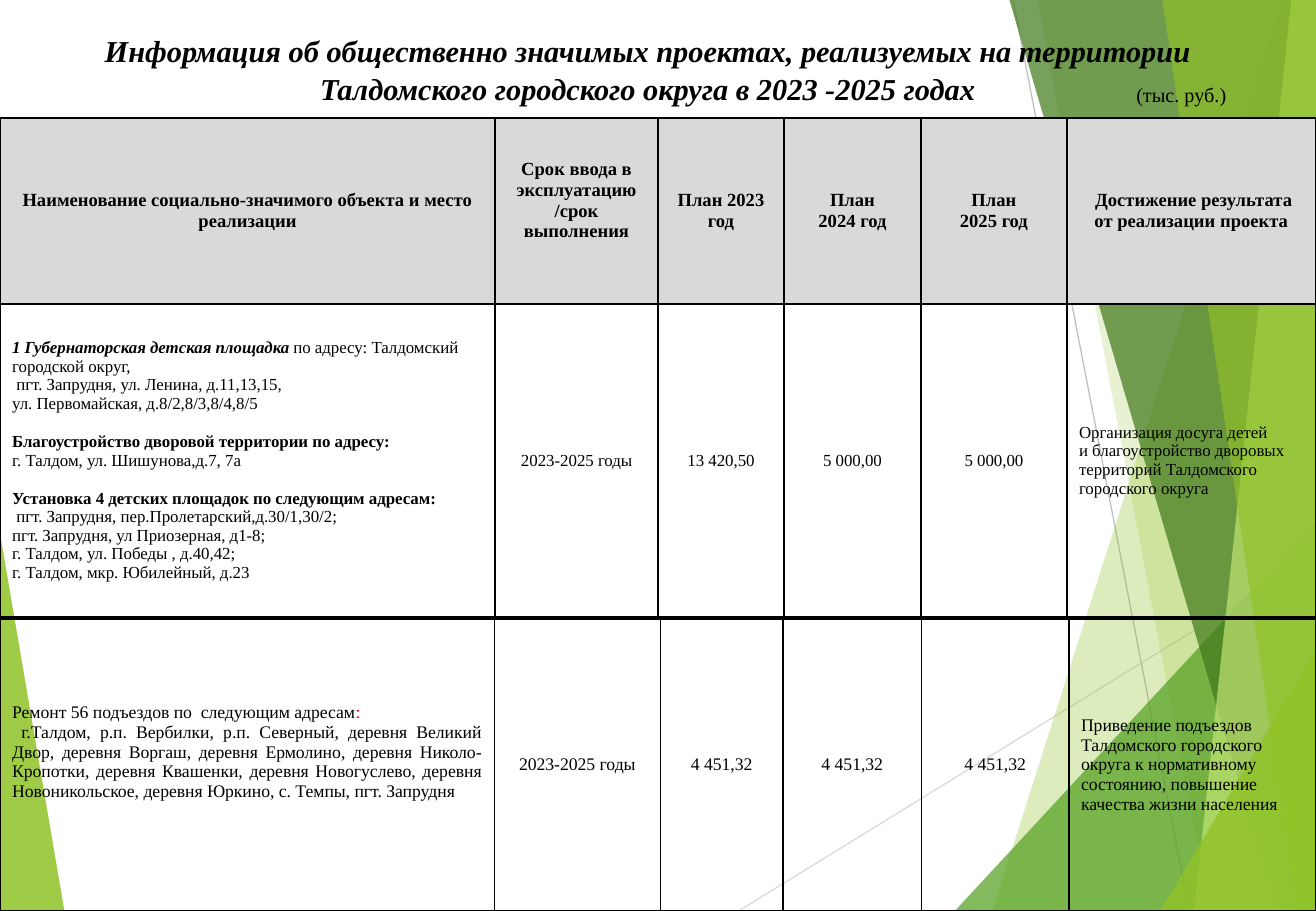
from dataclasses import dataclass

from lxml import etree
from pptx import Presentation
from pptx.dml.color import RGBColor
from pptx.enum.shapes import MSO_CONNECTOR
from pptx.enum.text import MSO_ANCHOR, MSO_AUTO_SIZE, PP_ALIGN
from pptx.oxml.ns import qn
from pptx.util import Pt

LEFT, CENTER, JUSTIFY = PP_ALIGN.LEFT, PP_ALIGN.CENTER, PP_ALIGN.JUSTIFY
TOP, MIDDLE = MSO_ANCHOR.TOP, MSO_ANCHOR.MIDDLE
NO_AUTOFIT, STRAIGHT = MSO_AUTO_SIZE.NONE, MSO_CONNECTOR.STRAIGHT


@dataclass(frozen=True)
class Theme:
    """Colours, font and type sizes of the slide."""
    font: str = "Times New Roman"
    text: str = "000000"
    accent: str = "FF0000"
    header_fill: str = "D9D9D9"
    lime: str = "90C226"
    green: str = "54A021"
    forest: str = "3F7819"
    pale: str = "C0E474"
    title_size: float = 18
    unit_size: float = 12
    header_size: float = 11
    playground_size: float = 10
    repair_size: float = 10.5


THEME = Theme()
WIDTH, HEIGHT = 780, 540

TITLE = ["Информация об общественно значимых проектах, реализуемых на территории",
         "Талдомского городского округа в 2023 -2025 годах"]
UNIT = ["(тыс. руб.)"]
HEADER = [
    ["Наименование социально-значимого объекта и место реализации"],
    ["Срок ввода в эксплуатацию /срок выполнения"],
    ["План 2023 год"],
    ["План", "2024 год"],
    ["План", "2025 год"],
    [" Достижение результата от реализации проекта"],
]
PLAYGROUNDS = [
    [[("1 Губернаторская детская площадка ", "lead"),
      ("по адресу: Талдомский городской округ,", "plain")],
     " пгт. Запрудня, ул. Ленина, д.11,13,15,",
     "ул. Первомайская, д.8/2,8/3,8/4,8/5",
     [("Благоустройство дворовой территории по адресу:", "heading")],
     "г. Талдом, ул. Шишунова,д.7, 7а",
     [("Установка 4 детских площадок по следующим адресам:", "heading")],
     " пгт. Запрудня, пер.Пролетарский,д.30/1,30/2;",
     "пгт. Запрудня, ул Приозерная, д1-8;",
     "г. Талдом, ул. Победы , д.40,42;",
     "г. Талдом, мкр. Юбилейный, д.23"],
    ["2023-2025 годы"], ["13 420,50"], ["5 000,00"], ["5 000,00"],
    ["Организация досуга детей",
     "и благоустройство дворовых территорий Талдомского городского округа"],
]
REPAIRS = [
    [[("Ремонт 56 подъездов по  следующим адресам", "plain"), (":", "accent")],
     " г.Талдом, р.п. Вербилки, р.п. Северный, деревня Великий Двор, "
     "деревня Воргаш, деревня Ермолино, деревня Николо-Кропотки, "
     "деревня Квашенки, деревня Новогуслево, деревня Новоникольское, "
     "деревня Юркино, с. Темпы, пгт. Запрудня"],
    ["2023-2025 годы"], ["4 451,32"], ["4 451,32"], ["4 451,32"],
    ["Приведение подъездов Талдомского городского округа к нормативному "
     "состоянию, повышение качества жизни населения"],
]
RUN_STYLES = {
    "plain": {},
    "lead": {"bold": True, "italic": True},
    "heading": {"bold": True},
    "accent": {"color": THEME.accent},
}
HEADER_ALIGN = [CENTER] * 6
PLAYGROUND_ALIGN = [LEFT] + [CENTER] * 4 + [LEFT]
REPAIR_ALIGN = [JUSTIFY] + [CENTER] * 4 + [LEFT]

PLAN_TABLE = {
    "top": 70, "columns": [293.5, 96.5, 74.7, 81.2, 86.5, 147.6],
    "rows": [
        {"cells": HEADER, "height": 110.2, "size": THEME.header_size, "bold": True,
         "align": HEADER_ALIGN, "fill": THEME.header_fill, "lift": {1: 12.4}},
        {"cells": PLAYGROUNDS, "height": 185.6, "size": THEME.playground_size,
         "bold": False, "align": PLAYGROUND_ALIGN, "fill": None, "lift": {}},
    ],
}
REPAIR_TABLE = {
    "top": 367, "columns": [293, 98.4, 72.8, 82, 87.4, 146.4],
    "rows": [
        {"cells": REPAIRS, "height": 172.8, "size": THEME.repair_size, "bold": False,
         "align": REPAIR_ALIGN, "fill": None, "lift": {0: 15}},
    ],
}

LEFT_FACET = (0, 316, 38.2, 0, THEME.lime, 85)
RIGHT_FACETS = [
    (760.3, 0, 588.2, WIDTH, THEME.lime, 30),
    (614.9, 0, 717.1, WIDTH, THEME.lime, 20),
    (WIDTH, 308.9, 565.9, WIDTH, THEME.green, 72),
    (598.3, 0, 756.7, WIDTH, THEME.forest, 70),
    (765.4, 0, 707.8, WIDTH, THEME.pale, 70),
    (689, 0, 769, WIDTH, THEME.lime, 65),
    (WIDTH, 385.2, 687.6, WIDTH, THEME.lime, 80),
]
RAYS = [(437.8, HEIGHT, WIDTH, 329.3, "D9D9D9"), (600.5, 0, 704.9, HEIGHT, "BFBFBF")]


def write(frame, paragraphs, *, size, align=LEFT, bold=False, italic=False, spacing=None):
    frame.word_wrap = True
    for index, content in enumerate(paragraphs):
        paragraph = frame.paragraphs[0] if index == 0 else frame.add_paragraph()
        paragraph.alignment = align
        paragraph.line_spacing = spacing
        runs = [(content, "plain")] if isinstance(content, str) else content
        if runs[0][1] == "heading":
            paragraph.space_before = Pt(size * 1.15)
        for words, style_name in runs:
            style = RUN_STYLES[style_name]
            run = paragraph.add_run()
            run.text = words
            font = run.font
            font.name, font.size = THEME.font, Pt(size)
            font.bold = style.get("bold", bold)
            font.italic = style.get("italic", italic)
            font.color.rgb = RGBColor.from_string(style.get("color", THEME.text))


def clear_margins(frame):
    frame.margin_left = frame.margin_right = frame.margin_top = frame.margin_bottom = 0
    frame.vertical_anchor = TOP
    frame.auto_size = NO_AUTOFIT


def add_facet(slide, facet):
    x_top, y_top, x_bottom, side, color, opacity = facet
    outline = slide.shapes.build_freeform(Pt(x_top), Pt(y_top), scale=1)
    corners = [(x_bottom, HEIGHT), (side, HEIGHT), (side, y_top)]
    outline.add_line_segments([(Pt(x), Pt(y)) for x, y in corners], close=True)
    shape = outline.convert_to_shape()
    shape.shadow.inherit = False
    shape.line.fill.background()
    shape.fill.solid()
    shape.fill.fore_color.rgb = RGBColor.from_string(color)
    tint = shape.fill._xPr.find(qn("a:solidFill")).find(qn("a:srgbClr"))
    etree.SubElement(tint, qn("a:alpha"), val=str(opacity * 1000))


def add_ray(slide, ray):
    *ends, color = ray
    line = slide.shapes.add_connector(STRAIGHT, *map(Pt, ends))
    line.line.width = Pt(0.75)
    line.line.color.rgb = RGBColor.from_string(color)
    etree.SubElement(line._element.spPr, qn("a:effectLst"))


def add_borders(cell):
    properties = cell._tc.get_or_add_tcPr()
    for side in ("lnL", "lnR", "lnT", "lnB"):
        border = etree.SubElement(properties, qn(f"a:{side}"), w=str(Pt(1)))
        fill = etree.SubElement(border, qn("a:solidFill"))
        etree.SubElement(fill, qn("a:srgbClr"), val=THEME.text)


def add_projects(slide, content):
    rows, columns = content["rows"], content["columns"]
    height = sum(row["height"] for row in rows)
    table = slide.shapes.add_table(len(rows), len(columns), 0, Pt(content["top"]),
                                   Pt(sum(columns)), Pt(height)).table
    table.first_row = table.horz_banding = False
    for column, width in zip(table.columns, columns):
        column.width = Pt(width)
    for row_index, row in enumerate(rows):
        table.rows[row_index].height = Pt(row["height"])
        for index, (words, align) in enumerate(zip(row["cells"], row["align"])):
            cell = table.cell(row_index, index)
            add_borders(cell)
            if row["fill"]:
                cell.fill.solid()
                cell.fill.fore_color.rgb = RGBColor.from_string(row["fill"])
            else:
                cell.fill.background()
            cell.vertical_anchor = MIDDLE
            cell.margin_bottom = Pt(3.6 + row["lift"].get(index, 0))
            write(cell.text_frame, words, size=row["size"], align=align, bold=row["bold"])


def main():
    deck = Presentation()
    deck.slide_width, deck.slide_height = Pt(WIDTH), Pt(HEIGHT)
    slide = deck.slides.add_slide(deck.slide_layouts[5])
    add_facet(slide, LEFT_FACET)
    for ray in RAYS:
        add_ray(slide, ray)
    for facet in RIGHT_FACETS:
        add_facet(slide, facet)
    title = slide.shapes.title
    slide.shapes._spTree.append(title._element)
    title.left, title.top, title.width, title.height = map(Pt, (33, 18, 702, 195))
    clear_margins(title.text_frame)
    write(title.text_frame, TITLE, size=THEME.title_size, align=CENTER,
          bold=True, italic=True, spacing=1.05)
    add_projects(slide, PLAN_TABLE)
    add_projects(slide, REPAIR_TABLE)
    unit = slide.shapes.add_textbox(Pt(673.5), Pt(48.5), Pt(97), Pt(17))
    clear_margins(unit.text_frame)
    write(unit.text_frame, UNIT, size=THEME.unit_size)
    deck.save("out.pptx")


if __name__ == "__main__":
    main()
